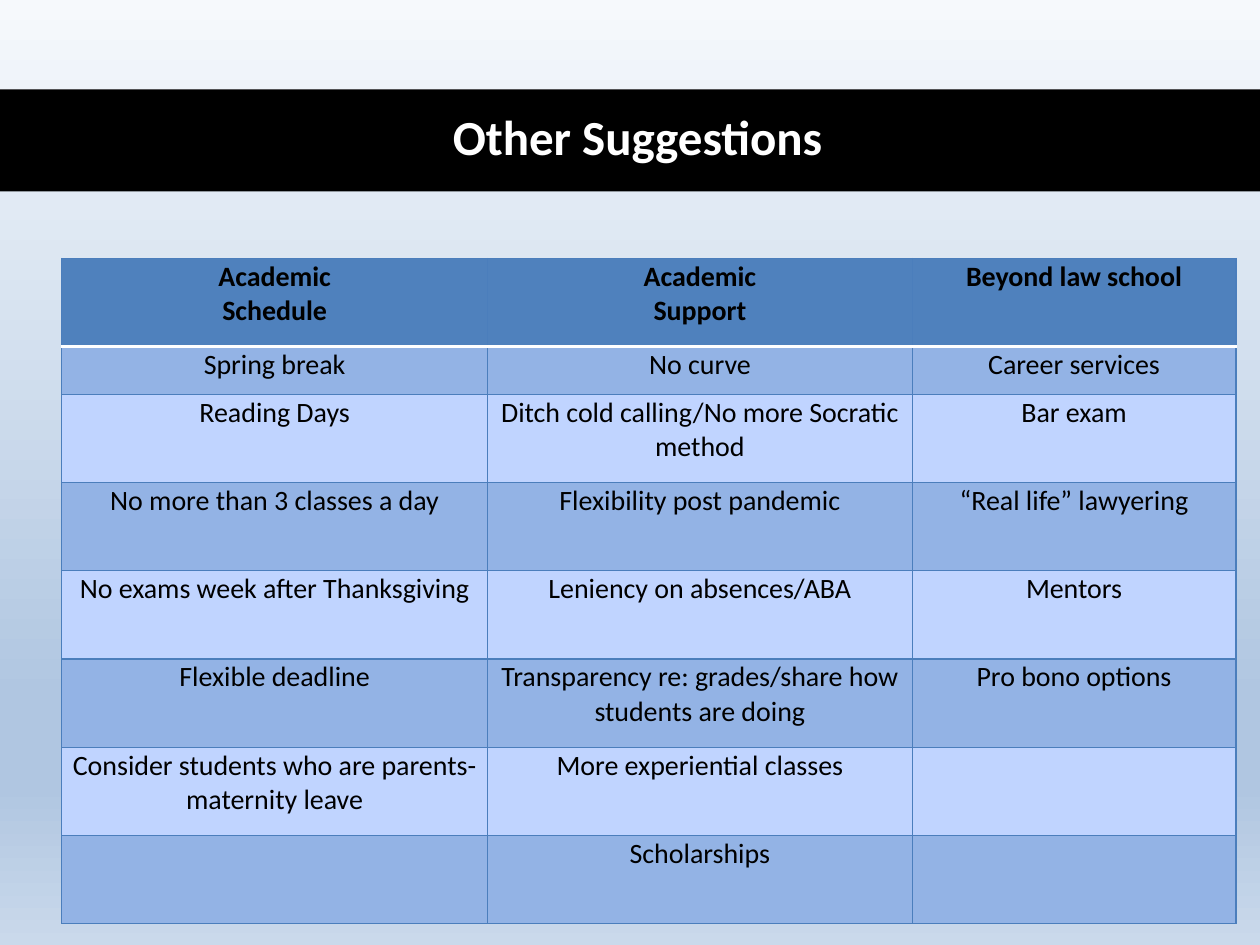
from dataclasses import dataclass

from lxml.etree import SubElement
from pptx import Presentation
from pptx.dml.color import RGBColor
from pptx.enum.shapes import MSO_SHAPE
from pptx.enum.text import MSO_ANCHOR, PP_ALIGN
from pptx.oxml.ns import qn
from pptx.slide import Slide
from pptx.table import _Cell
from pptx.text.text import _Paragraph
from pptx.util import Inches, Pt

FONT = "Calibri"
BLACK, WHITE = "000000", "FFFFFF"
HEADER_FILL = "4F81BD"
BAND_FILLS = ("C0D4FF", "93B3E5")
COLUMN_WIDTHS = (3.38, 3.37, 2.57)
TALL_ROW, SHORT_ROW = 0.7, 0.38
CELL_MARGIN = 0.01


@dataclass(frozen=True)
class Border:
    color: str
    points: float


@dataclass(frozen=True)
class GradientStop:
    percent: int
    color: str


GRID = Border("4B7EBC", 0.75)
HEADER_RULE = Border(WHITE, 2)
SKY = (
    GradientStop(0, "F6F9FC"),
    GradientStop(74, "B0C6E1"),
    GradientStop(83, "B0C6E1"),
    GradientStop(100, "CAD9EB"),
)
SUGGESTIONS = (
    (("Academic", "Schedule"), ("Academic", "Support"), ("Beyond law school",)),
    (("Spring break",), ("No curve",), ("Career services",)),
    (("Reading Days",), ("Ditch cold calling/No more Socratic method",), ("Bar exam",)),
    (("No more than 3 classes a day",), ("Flexibility post pandemic",), ("“Real life” lawyering",)),
    (("No exams week after Thanksgiving",), ("Leniency on absences/ABA",), ("Mentors",)),
    (
        ("Flexible deadline",),
        ("Transparency re: grades/share how students are doing",),
        ("Pro bono options",),
    ),
    (("Consider students who are parents- maternity leave",), ("More experiential classes",), ()),
    ((), ("Scholarships",), ()),
)


def rgb(color: str) -> RGBColor:
    return RGBColor.from_string(color)


def write_run(paragraph: _Paragraph, text: str, size: int, color: str, bold: bool) -> None:
    paragraph.alignment = PP_ALIGN.CENTER
    run = paragraph.add_run()
    run.text = text
    run.font.name = FONT
    run.font.size = Pt(size)
    run.font.bold = bold
    run.font.color.rgb = rgb(color)


def paint_background(slide: Slide) -> None:
    fill = slide.background.fill
    fill.gradient()
    fill.gradient_angle = 270
    stops = slide.element.find(".//" + qn("a:gsLst"))
    for default_stop in list(stops):
        stops.remove(default_stop)
    for stop in SKY:
        position = SubElement(stops, qn("a:gs"), pos=str(stop.percent * 1000))
        SubElement(position, qn("a:srgbClr"), val=stop.color)


def draw_title(slide: Slide) -> None:
    band = slide.shapes.add_shape(
        MSO_SHAPE.RECTANGLE, Inches(0), Inches(0.71), Inches(10), Inches(0.81)
    )
    band.shadow.inherit = False
    band.fill.solid()
    band.fill.fore_color.rgb = rgb(BLACK)
    band.line.fill.background()

    title = slide.shapes.add_textbox(Inches(0.46), Inches(0.7), Inches(9.2), Inches(0.81))
    title.text_frame.word_wrap = True
    title.text_frame.vertical_anchor = MSO_ANCHOR.MIDDLE
    heading = title.text_frame.paragraphs[0]
    heading.line_spacing = 0.9
    write_run(heading, "Other Suggestions", 28, WHITE, True)


def draw_border(cell: _Cell, side: str, border: Border) -> None:
    properties = cell._tc.get_or_add_tcPr()
    line = SubElement(properties, qn(f"a:ln{side}"), w=str(Pt(border.points)))
    fill = SubElement(line, qn("a:solidFill"))
    SubElement(fill, qn("a:srgbClr"), val=border.color)


def fill_cell(cell: _Cell, lines: tuple[str, ...], row: int) -> None:
    is_header = row == 0
    cell.margin_left = cell.margin_right = Inches(CELL_MARGIN)
    cell.margin_top = cell.margin_bottom = Inches(CELL_MARGIN)
    draw_border(cell, "L", GRID)
    draw_border(cell, "R", GRID)
    draw_border(cell, "T", HEADER_RULE if row == 1 else GRID)
    draw_border(cell, "B", HEADER_RULE if is_header else GRID)
    cell.fill.solid()
    cell.fill.fore_color.rgb = rgb(HEADER_FILL if is_header else BAND_FILLS[row % 2])
    for index, text in enumerate(lines):
        frame = cell.text_frame
        paragraph = frame.add_paragraph() if index else frame.paragraphs[0]
        write_run(paragraph, text, 16, BLACK, is_header)


def draw_suggestions(slide: Slide) -> None:
    row_heights = [SHORT_ROW if row == 1 else TALL_ROW for row in range(len(SUGGESTIONS))]
    table = slide.shapes.add_table(
        len(SUGGESTIONS),
        len(COLUMN_WIDTHS),
        Inches(0.49),
        Inches(2.05),
        Inches(sum(COLUMN_WIDTHS)),
        Inches(sum(row_heights)),
    ).table
    table.first_row = table.horz_banding = False
    for column, width in zip(table.columns, COLUMN_WIDTHS):
        column.width = Inches(width)
    for row, (height, entries) in enumerate(zip(row_heights, SUGGESTIONS)):
        table.rows[row].height = Inches(height)
        for column, lines in enumerate(entries):
            fill_cell(table.cell(row, column), lines, row)


def main() -> None:
    presentation = Presentation()
    presentation.slide_width = Inches(10)
    presentation.slide_height = Inches(7.5)
    slide = presentation.slides.add_slide(presentation.slide_layouts[6])
    paint_background(slide)
    draw_title(slide)
    draw_suggestions(slide)
    presentation.save("out.pptx")


if __name__ == "__main__":
    main()
